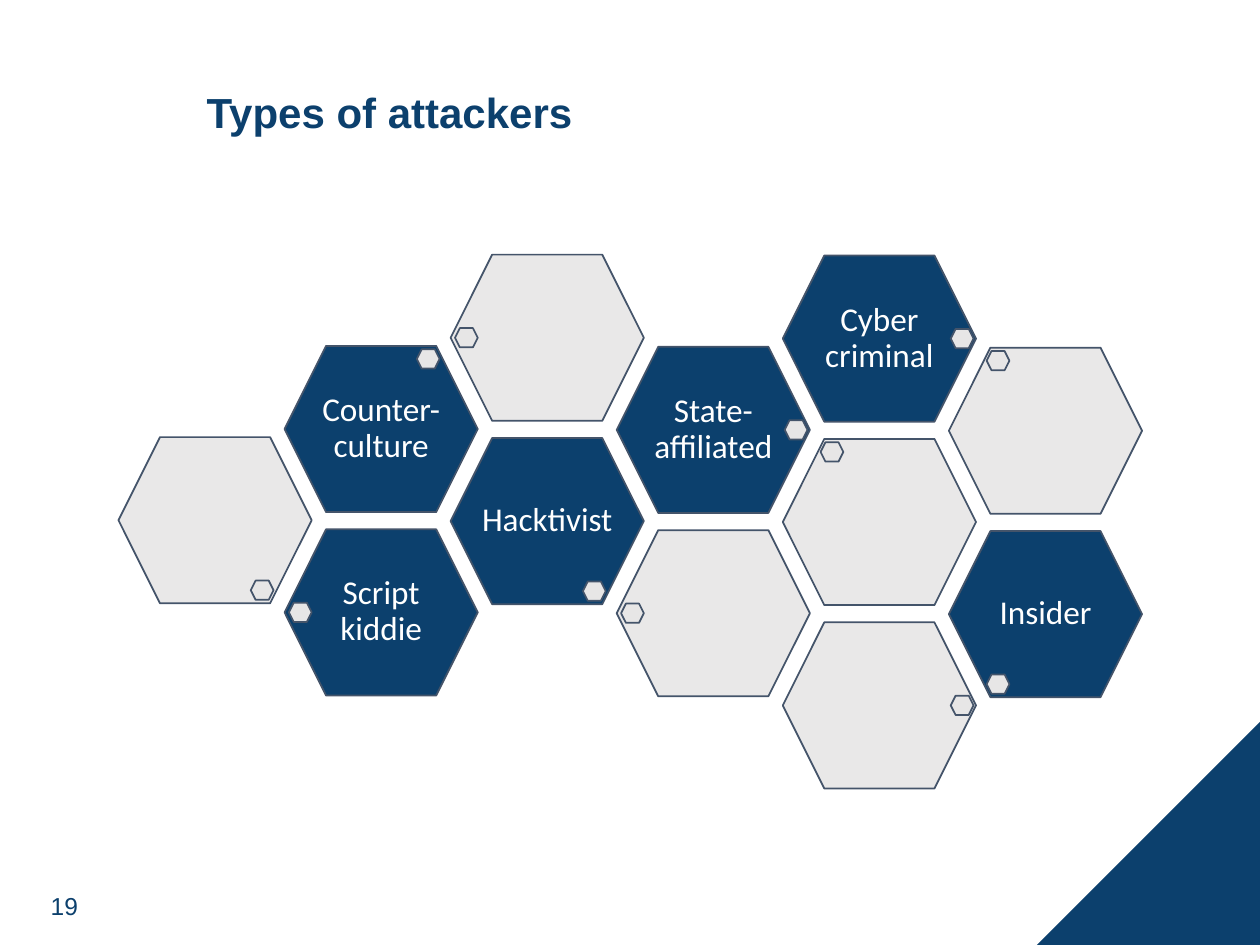
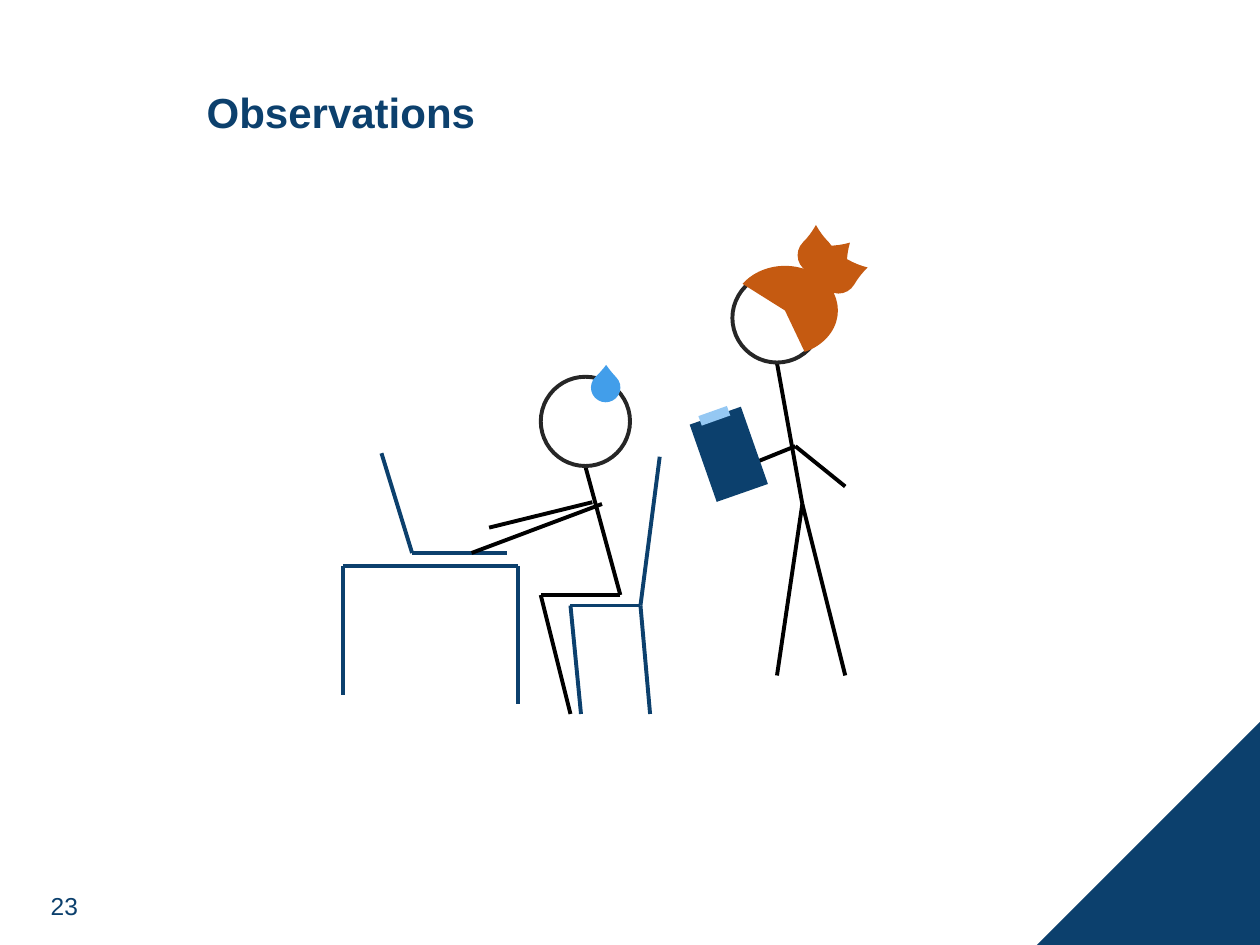
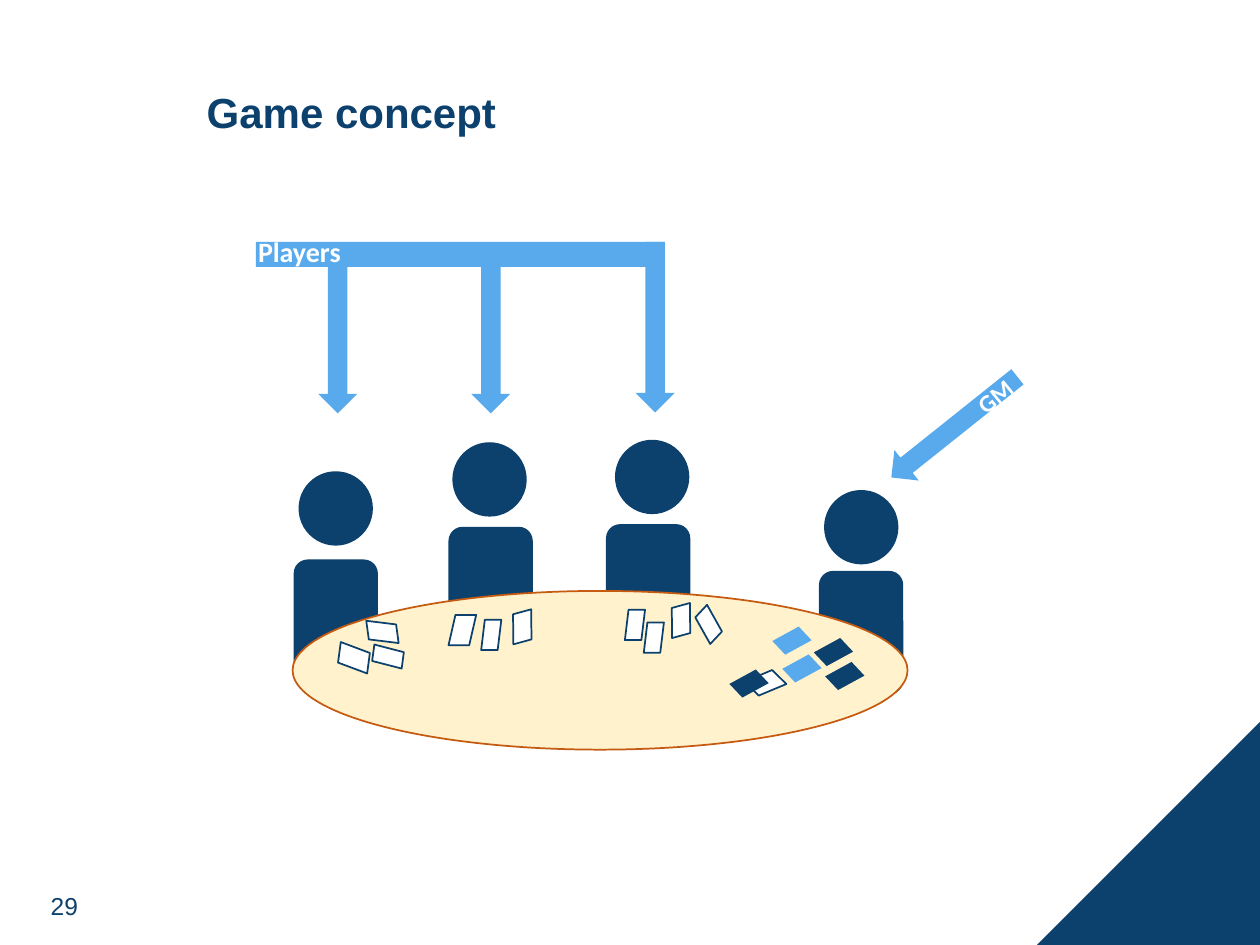
"""Build three slides: types of attackers, observations and game concept."""
import dataclasses
import itertools

import lxml.etree
import pptx
import pptx.dml.color
import pptx.enum.shapes
import pptx.enum.text
import pptx.oxml.ns
import pptx.util

Pt = pptx.util.Pt
RGB = pptx.dml.color.RGBColor.from_string
MSO = pptx.enum.shapes.MSO_SHAPE
ALIGN = pptx.enum.text.PP_ALIGN
ANCHOR = pptx.enum.text.MSO_ANCHOR


@dataclasses.dataclass(frozen=True)
class Theme:
    navy: str = "0C406D"
    sky: str = "59AAED"
    sweat: str = "429EEA"
    pale: str = "95C8F3"
    grey: str = "E7E6E6"
    slate: str = "44546A"
    hair: str = "C55A11"
    cream: str = "FFF2CC"
    white: str = "FFFFFF"
    black: str = "000000"
    ink: str = "262626"
    head_font: str = "Arial"
    body_font: str = "Calibri"
    title: float = 24
    hexagon: float = 19
    players: float = 16
    small: float = 14
    thin: float = 1
    thick: float = 2.25


T = Theme()

HEX_ORIGIN, HEX_PITCH, HEX_SIZE = (67.7, 145), (94.9, 52.4), (110.4, 95)
HEX_DRIFT = 0.25
LABEL_OFFSET, LABEL_SIZE = (17, 14.6), (76.4, 65.6)
MARK_SIZE = (13, 11)
MARKS = {
    "left": (2.5, 42), "right": (96, 42),
    "top left": (21.6, 2), "top right": (75.6, 2),
    "bottom left": (21.6, 82), "bottom right": (75.6, 82),
}
HEXAGONS = [
    (1, 3, "Script kiddie", "left"),
    (0, 2, "", "bottom right"),
    (2, 2, "Hacktivist", "bottom right"),
    (3, 3, "", "left"),
    (1, 1, "Counter-culture", "top right"),
    (2, 0, "", "left"),
    (3, 1, "State-affiliated", "right"),
    (4, 2, "", "top left"),
    (4, 0, "Cyber criminal", "right"),
    (5, 1, "", "top left"),
    (5, 3, "Insider", "bottom left"),
    (4, 4, "", "right"),
]

FURNITURE = [
    [(377, 261), (366, 346), (326, 346), (332, 408)],
    [(366, 346), (371.5, 408)],
    [(218, 259), (235.5, 316), (289.5, 316)],
    [(196, 397), (196, 323.5), (296, 323.5), (296, 402.5)],
]
PEOPLE = [
    [(334.5, 266.5), (354.5, 340), (309, 340), (326, 408)],
    [(344, 288), (269.5, 316)],
    [(338.5, 287), (279.5, 301.5)],
    [(444, 207.5), (458.5, 288), (444, 386)],
    [(458.5, 288), (483, 386)],
    [(433.5, 263.5), (454.5, 255), (483, 278)],
]
FACES = [(309, 215.3), (418.5, 156.2)]
FACE_SIZE = (51, 51)
DETAILS = [
    (MSO.TEAR, (337.7, 213.1, 16.8, 16.8), T.sweat, 316.2, [1.09]),
    (MSO.RECTANGLE, (401, 236.2, 31, 46.8), T.navy, 340.7, []),
    (MSO.RECTANGLE, (399.6, 234.7, 17.3, 5.8), T.pale, 340.4, []),
    (MSO.PIE, (418.3, 151.9, 60.5, 51), T.hair, 180, [19.26, 146.76]),
    (MSO.TEAR, (455.8, 135.4, 20.9, 20.9), T.hair, 315, [1.17]),
    (MSO.TEAR, (463, 140.4, 20.9, 20.9), T.hair, 0, [1.17]),
    (MSO.TEAR, (468.7, 146.9, 20.9, 20.9), T.hair, 30, [1.17]),
]

BODY_SIZE, HEAD_SIZE = (48.2, 70.6), (42.5, 42.5)
SEATS = [
    ((346.3, 299.5), (351.4, 251.3)),
    ((468, 326.2), (470.9, 280)),
    ((167.8, 319.7), (170.6, 269.3)),
    ((256.3, 301), (258.5, 252.7)),
]
TABLE = (167.2, 337.7, 351.4, 90.7)
CARD_KINDS = {
    "wide": (15.8, 17.3, 0.25),
    "tall": (11.5, 17.3, 0.18),
    "slant": (15.1, 16.6, 0.29),
    "sharp": (15.1, 16.6, 0.35),
    "flat": (18, 15.8, 0.42),
}
CARDS = [
    ("wide", 256.3, 351.4, 0, T.white),
    ("slant", 290.9, 349.9, 344.6, T.white),
    ("tall", 275, 354.2, 0, T.white),
    ("wide", 194.4, 367.2, 277.6, T.white),
    ("slant", 211, 352.8, 262.2, T.white),
    ("tall", 216, 366.5, 277.6, T.white),
    ("slant", 381.6, 346.3, 344.6, T.white),
    ("sharp", 397.4, 348.5, 313.1, T.white),
    ("tall", 367.9, 355.7, 0, T.white),
    ("tall", 357.1, 348.5, 0, T.white),
    ("slant", 475.2, 378, 46.6, T.navy),
    ("slant", 468.7, 364.3, 46.6, T.navy),
    ("flat", 428.4, 382.3, 44.5, T.white),
    ("slant", 420.5, 382.3, 46.6, T.navy),
    ("slant", 445, 357.8, 46.6, T.sky),
    ("slant", 450.7, 373.7, 46.6, T.sky),
]
ARROWS = [
    (534.2, 198, 22.3, 92.2, 231.4),
    (181.8, 151.2, 22.3, 85, 180),
    (269.3, 151.2, 22.3, 85, 180),
    (363.2, 138.2, 22.3, 97.5, 180),
]
BAR = (146.2, 138.2, 233.5, 14.4)
ARROW_LABELS = [
    ("Players", (140.4, 130.3, 113, 26.6), T.players, 0),
    ("GM", (549.4, 210.2, 48.2, 24.5), T.small, 320.6),
]


def write(sp, text, size, color, font=T.body_font, bold=False, align=ALIGN.LEFT,
          anchor=ANCHOR.TOP, spacing=1.0, insets=(7.2, 3.6)):
    """Put one formatted paragraph into a shape."""
    tf = sp.text_frame
    tf.word_wrap = True
    tf.vertical_anchor = anchor
    tf.margin_left = tf.margin_right = Pt(insets[0])
    tf.margin_top = tf.margin_bottom = Pt(insets[1])
    p = tf.paragraphs[0]
    p.alignment, p.line_spacing = align, spacing
    r = p.add_run()
    r.text = text
    r.font.size, r.font.name, r.font.bold = Pt(size), font, bold
    r.font.color.rgb = RGB(color)


def add_label(s, text, box, size, color, rotation=0, **fmt):
    """Add a text box."""
    sp = s.shapes.add_textbox(*map(Pt, box))
    sp.rotation = rotation
    write(sp, text, size, color, **fmt)


def add_shape(s, kind, box, fill=None, line=None, width=T.thin, rotation=0,
              adjust=(), alpha=None):
    """Add a preset shape with plain fill and outline."""
    sp = s.shapes.add_shape(kind, *map(Pt, box))
    sp.shadow.inherit = False
    sp.rotation = rotation
    for i, value in enumerate(adjust):
        sp.adjustments[i] = value
    if fill:
        sp.fill.solid()
        sp.fill.fore_color.rgb = RGB(fill)
    else:
        sp.fill.background()
    if alpha:
        clr = sp._element.spPr.xpath("./a:solidFill/a:srgbClr")[0]
        lxml.etree.SubElement(clr, pptx.oxml.ns.qn("a:alpha"), val=str(alpha * 1000))
    if line:
        sp.line.color.rgb = RGB(line)
        sp.line.width = Pt(width)
    else:
        sp.line.fill.background()


def add_chain(s, points, color):
    """Join consecutive points with straight connectors."""
    for start, end in itertools.pairwise(points):
        cx = s.shapes.add_connector(pptx.enum.shapes.MSO_CONNECTOR.STRAIGHT,
                                    *map(Pt, start + end))
        cx.line.color.rgb = RGB(color)
        cx.line.width = Pt(T.thick)
        lxml.etree.SubElement(cx._element.spPr, pptx.oxml.ns.qn("a:effectLst"))


def new_slide(prs, title, number):
    """Add a slide with title, page number and corner triangle."""
    s = prs.slides.add_slide(prs.slide_layouts[5])
    sp = s.shapes.title
    sp.left, sp.top, sp.width, sp.height = map(Pt, (110.9, 31.7, 585.4, 67.7))
    write(sp, title, T.title, T.navy, font=T.head_font, bold=True,
          anchor=ANCHOR.MIDDLE, spacing=0.9)
    add_label(s, number, (23.8, 504.7, 29.5, 25.9), T.small, T.navy,
              font=T.head_font, anchor=ANCHOR.MIDDLE, insets=(5.2, 2.6))
    add_shape(s, MSO.RIGHT_TRIANGLE, (592.5, 412.5, 127.5, 127.5), T.navy, rotation=270)
    return s


def build_attackers(prs):
    """Draw the honeycomb of attacker types."""
    s = new_slide(prs, "Types of attackers", "19")
    for col, row, text, mark in HEXAGONS:
        x = HEX_ORIGIN[0] + col * HEX_PITCH[0]
        y = HEX_ORIGIN[1] + row * HEX_PITCH[1] + col * HEX_DRIFT
        add_shape(s, MSO.HEXAGON, (x, y, *HEX_SIZE), T.navy if text else T.grey,
                  T.slate, adjust=[0.25], alpha=None if text else 90)
        if text:
            add_label(s, text, (x + LABEL_OFFSET[0], y + LABEL_OFFSET[1], *LABEL_SIZE),
                      T.hexagon, T.white, align=ALIGN.CENTER, anchor=ANCHOR.MIDDLE,
                      spacing=0.9, insets=(0, 2))
        dx, dy = MARKS[mark]
        add_shape(s, MSO.HEXAGON, (x + dx, y + dy, *MARK_SIZE), T.grey, T.slate,
                  adjust=[0.25])


def build_observations(prs):
    """Draw the observer standing behind a person at a desk."""
    s = new_slide(prs, "Observations", "23")
    for chains, color in ((FURNITURE, T.navy), (PEOPLE, T.black)):
        for points in chains:
            add_chain(s, points, color)
    for face in FACES:
        add_shape(s, MSO.OVAL, (*face, *FACE_SIZE), line=T.ink, width=T.thick)
    for kind, box, fill, rotation, adjust in DETAILS:
        add_shape(s, kind, box, fill, rotation=rotation, adjust=adjust)


def build_game(prs):
    """Draw players and game master around the table."""
    s = new_slide(prs, "Game concept", "29")
    for body, head in SEATS:
        add_shape(s, MSO.ROUNDED_RECTANGLE, (*body, *BODY_SIZE), T.navy)
        add_shape(s, MSO.OVAL, (*head, *HEAD_SIZE), T.navy)
    add_shape(s, MSO.OVAL, TABLE, T.cream, T.hair)
    for kind, x, y, rotation, fill in CARDS:
        w, h, slope = CARD_KINDS[kind]
        add_shape(s, MSO.PARALLELOGRAM, (x, y, w, h), fill,
                  T.navy if fill == T.white else None, rotation=rotation, adjust=[slope])
    for *box, rotation in ARROWS:
        add_shape(s, MSO.UP_ARROW, box, T.sky, rotation=rotation)
    add_shape(s, MSO.RECTANGLE, BAR, T.sky)
    for text, box, size, rotation in ARROW_LABELS:
        add_label(s, text, box, size, T.white, rotation, bold=True)


def main():
    """Build and save the presentation."""
    prs = pptx.Presentation()
    prs.slide_width, prs.slide_height = Pt(720), Pt(540)
    build_attackers(prs)
    build_observations(prs)
    build_game(prs)
    prs.save("out.pptx")


if __name__ == "__main__":
    main()
